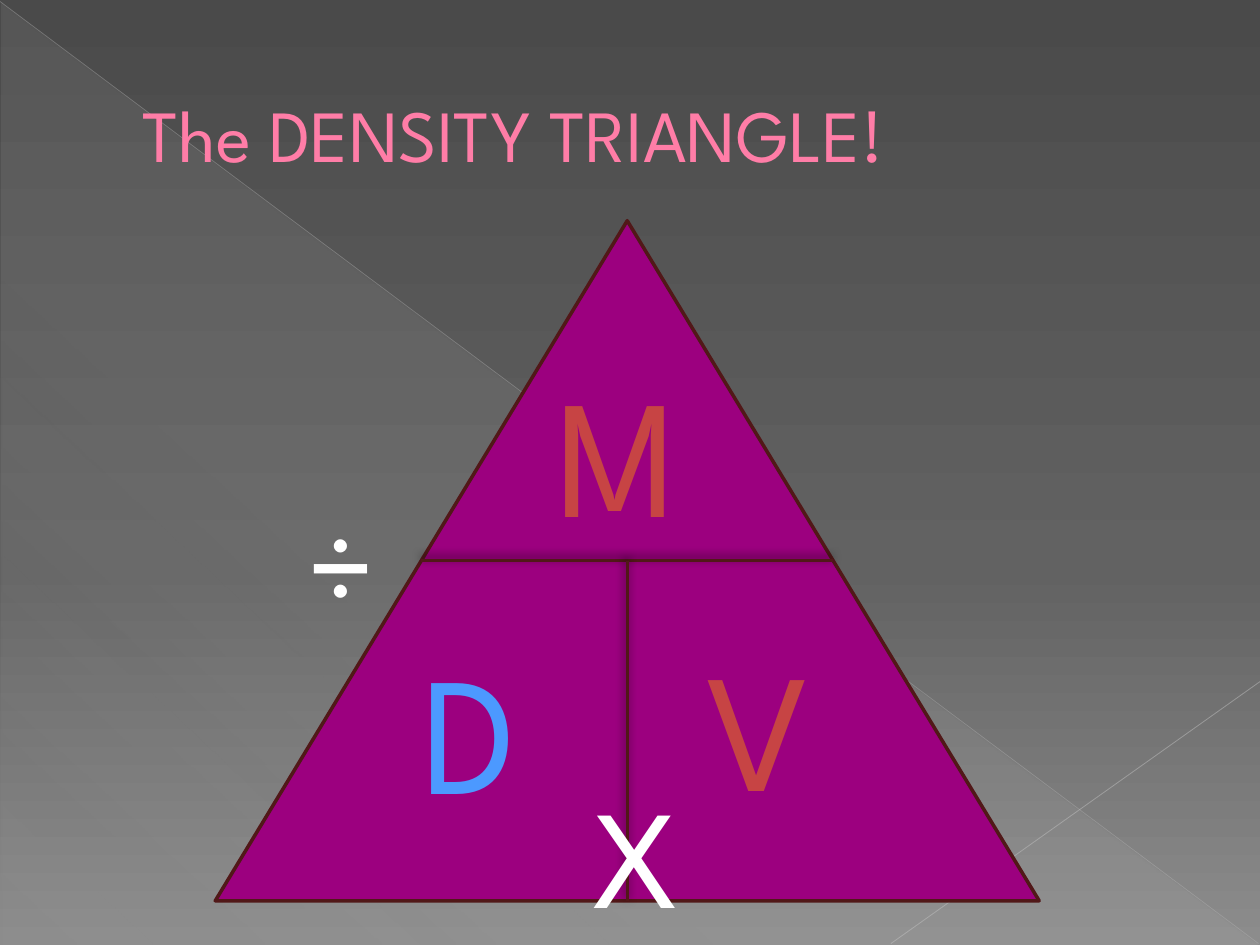
from lxml import etree
from pptx import Presentation
from pptx.dml.color import RGBColor
from pptx.enum.shapes import MSO_CONNECTOR, MSO_SHAPE
from pptx.enum.text import MSO_ANCHOR
from pptx.oxml.ns import qn
from pptx.util import Cm, Pt

STRAIGHT = MSO_CONNECTOR.STRAIGHT
TRIANGLE = MSO_SHAPE.ISOSCELES_TRIANGLE
RIGHT_TRIANGLE = MSO_SHAPE.RIGHT_TRIANGLE
TOP, MIDDLE = MSO_ANCHOR.TOP, MSO_ANCHOR.MIDDLE

COLORS = {
    "dark": "4A4A4A", "mid": "626262", "light": "8C8C8C", "glow": "D2D2D2",
    "ray": "BFBFBF", "short_ray": "C6C6C6", "pink": "FF7DA7", "rose": "B12761",
    "purple": "9C007F", "maroon": "511818", "blue": "4C99FF", "red": "C74444",
    "white": "FFFFFF", "black": "000000",
}


def set_gradient(fill, element, angle, stops):
    fill.gradient()
    fill.gradient_angle = angle
    stop_list = element.find(".//" + qn("a:gsLst"))
    for stop in list(stop_list):
        stop_list.remove(stop)
    for position, color, opacity in stops:
        stop = etree.SubElement(stop_list, qn("a:gs"), pos=str(position * 1000))
        tint = etree.SubElement(stop, qn("a:srgbClr"), val=COLORS[color])
        if opacity < 100:
            etree.SubElement(tint, qn("a:alpha"), val=str(opacity * 1000))


def add_text(words, left, top, width, height, size, color, wrap=True, anchor=TOP):
    box = slide.shapes.add_textbox(Cm(left), Cm(top), Cm(width), Cm(height))
    frame = box.text_frame
    frame.word_wrap = wrap
    frame.vertical_anchor = anchor
    run = frame.paragraphs[0].add_run()
    run.text = words
    run.font.size = Pt(size)
    run.font.name = "League Spartan"
    run.font.color.rgb = RGBColor.from_string(COLORS[color])
    return box


prs = Presentation()
prs.slide_width, prs.slide_height = Cm(25.4), Cm(19.05)
slide = prs.slides.add_slide(prs.slide_layouts[6])
background = slide.background.fill
set_gradient(background, slide.element, 270,
             [(0, "dark", 100), (60, "mid", 100), (100, "light", 100)])

sheen = slide.shapes.add_shape(RIGHT_TRIANGLE, Cm(0.03), Cm(0.05), Cm(25.35), Cm(19))
sheen.shadow.inherit = False
sheen.line.fill.background()
set_gradient(sheen.fill, sheen.element, 227,
             [(0, "glow", 10), (70, "glow", 8), (100, "glow", 1)])

apex, base, crossbar = 4.45, 18.16, 11.3
left_corner, side = 4.34, 16.61
center = left_corner + side / 2

density_triangle = slide.shapes.add_shape(
    TRIANGLE, Cm(left_corner), Cm(apex), Cm(side), Cm(base - apex))
density_triangle.shadow.inherit = False
density_triangle.fill.solid()
density_triangle.fill.fore_color.rgb = RGBColor.from_string(COLORS["purple"])
density_triangle.line.color.rgb = RGBColor.from_string(COLORS["maroon"])
density_triangle.line.width = Pt(2)

for x1, y1, x2, y2, color, width, opacity, shaded in [
    (0, 0.03, 25.37, 19.02, "ray", 0.39, 35, False),
    (25.4, 13.74, 17.96, 19.02, "short_ray", 0.47, 45, False),
    (center - side / 4, crossbar, center + side / 4, crossbar, "maroon", 2, 100, True),
    (center, base, center, crossbar, "maroon", 2, 100, True),
]:
    line = slide.shapes.add_connector(STRAIGHT, Cm(x1), Cm(y1), Cm(x2), Cm(y2))
    line.line.color.rgb = RGBColor.from_string(COLORS[color])
    line.line.width = Pt(width)
    properties = line.element.spPr
    effects = etree.SubElement(properties, qn("a:effectLst"))
    if shaded:
        shadow = etree.SubElement(
            effects, qn("a:outerShdw"), blurRad=str(Pt(5)), dist=str(Pt(2)),
            dir=str(245 * 60000), algn="tl", rotWithShape="0")
        shade = etree.SubElement(shadow, qn("a:srgbClr"), val=COLORS["black"])
        etree.SubElement(shade, qn("a:alpha"), val="50000")
    else:
        tint = properties.find(".//" + qn("a:srgbClr"))
        etree.SubElement(tint, qn("a:alpha"), val=str(opacity * 1000))
        density_triangle.element.addprevious(line.element)

title = add_text("The DENSITY TRIANGLE!", 1.27, 0.74, 22.86, 3.89, 42, "pink", anchor=MIDDLE)
heading = title.text_frame.paragraphs[0]
heading._p.get_or_add_pPr().set("marL", str(Cm(1.35)))
outline = etree.Element(qn("a:ln"), w=str(Pt(0.5)))
outline_fill = etree.SubElement(outline, qn("a:solidFill"))
etree.SubElement(outline_fill, qn("a:srgbClr"), val=COLORS["rose"])
heading.runs[0].font._element.insert(0, outline)
density_triangle.element.addprevious(title.element)

for symbol, left, top, width, height, size, color, wrap in [
    ("D", 8.26, 12.5, 2.74, 4.37, 96, "blue", True),
    ("V", 14, 12.45, 2.9, 4.37, 96, "red", False),
    ("M", 10.97, 6.93, 3.84, 4.37, 96, "red", False),
    ("÷", 5.92, 9.47, 8.38, 3.68, 80, "white", True),
    ("X", 11.71, 15.37, 8.38, 3.68, 80, "white", True),
]:
    add_text(symbol, left, top, width, height, size, color, wrap=wrap)

prs.save("out.pptx")
